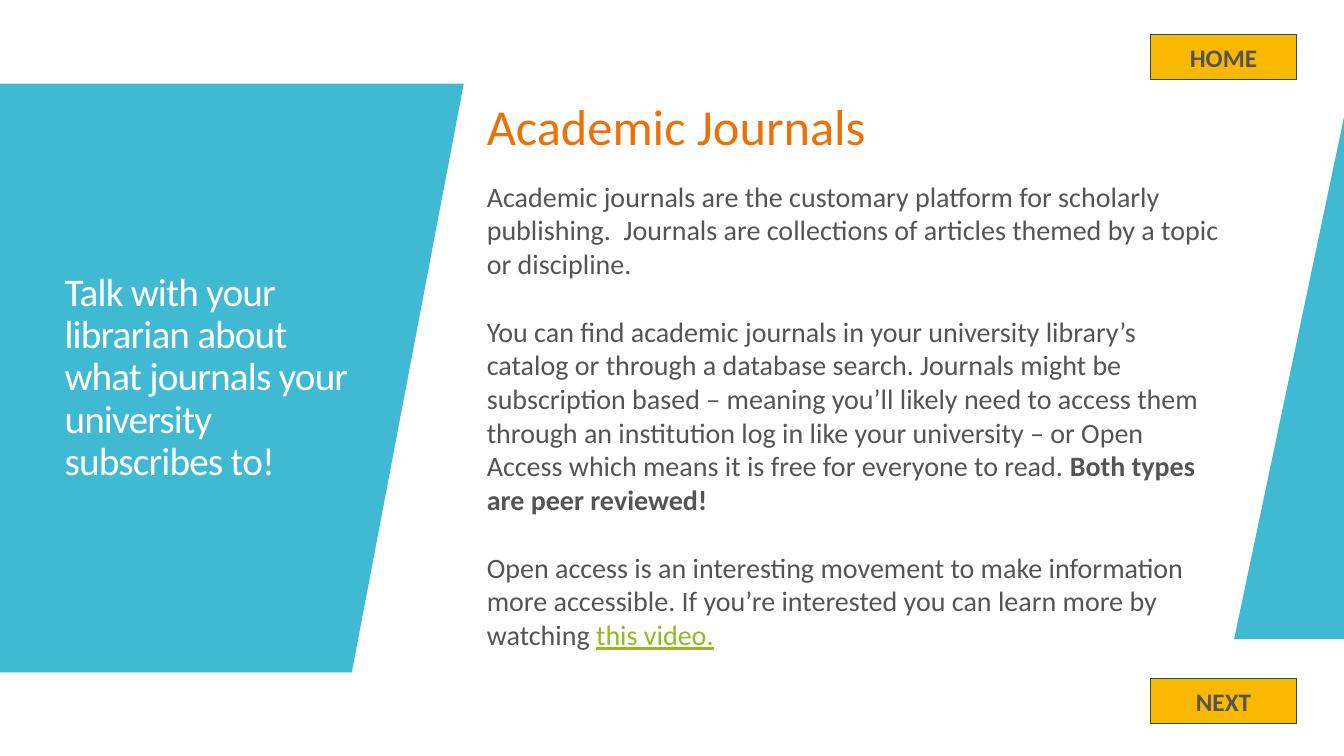
from dataclasses import dataclass

from pptx import Presentation
from pptx.dml.color import RGBColor as RGB
from pptx.enum.shapes import MSO_SHAPE as Shape
from pptx.enum.text import MSO_ANCHOR as Anchor, PP_ALIGN as Align
from pptx.util import Pt

PX = 9144  # EMU per px, 100 px to the inch
FONT = "Calibri"
TEAL = RGB(0x40, 0xBA, 0xD2)
GOLD = RGB(0xFA, 0xB9, 0x00)
EDGE = RGB(0x1C, 0x52, 0x5C)
ORANGE = RGB(0xEE, 0x70, 0x08)
GREY = RGB(0x54, 0x54, 0x54)
GREEN = RGB(0x90, 0xBB, 0x23)
WHITE = RGB(0xFF, 0xFF, 0xFF)


@dataclass
class Span:
    text: str
    size: int = 20
    color: RGB = GREY
    bold: bool = False
    under: bool = False


@dataclass
class Button:
    label: str
    top: int


PANELS = [
    [(0, 83), (460, 83), (349, 667), (0, 667)],
    [(1333, 116), (1333, 634), (1224, 634)],
]
BUTTONS = [Button("HOME", 34), Button("NEXT", 673)]
BODY = [
    [Span("Academic journals are the customary platform for scholarly "
          "publishing.  Journals are collections of articles themed by a "
          "topic or discipline.")],
    [Span("You can find academic journals in your university library’s "
          "catalog or through a database search. Journals might be "
          "subscription based – meaning you’ll likely need to access them "
          "through an institution log in like your university – or Open "
          "Access which means it is free for everyone to read."),
     Span(" Both types are peer reviewed!", bold=True)],
    [Span("Open access is an interesting movement to make information more "
          "accessible. If you’re interested you can learn more by watching "),
     Span("this video.", color=GREEN, under=True)],
]


def add_run(para, span: Span):
    run = para.add_run()
    run.text = span.text
    font = run.font
    font.name, font.size, font.bold = FONT, Pt(span.size), span.bold
    font.color.rgb = span.color
    if span.under:
        font.underline = True
    return run


def place(shape, left: int, top: int, width: int, height: int) -> None:
    shape.left, shape.top = left * PX, top * PX
    shape.width, shape.height = width * PX, height * PX


def add_panel(slide, points: list[tuple[int, int]]) -> None:
    pen = slide.shapes.build_freeform(*points[0], scale=PX)
    pen.add_line_segments(points[1:], close=True)
    panel = pen.convert_to_shape()
    panel.shadow.inherit = False
    panel.fill.solid()
    panel.fill.fore_color.rgb = TEAL
    panel.line.fill.background()


def add_text(slide, area: tuple[int, int, int, int],
             paras: list[list[Span]], gap: float = 0):
    box = slide.shapes.add_textbox(*(n * PX for n in area))
    frame = box.text_frame
    frame.word_wrap = True
    for i, spans in enumerate(paras):
        para = frame.add_paragraph() if i else frame.paragraphs[0]
        if i:
            para.space_before = Pt(gap)
        for span in spans:
            add_run(para, span)
    return frame


def add_button(slide, button: Button) -> None:
    shape = slide.shapes.add_shape(
        Shape.RECTANGLE, 1141 * PX, button.top * PX, 145 * PX, 45 * PX)
    shape.shadow.inherit = False
    shape.fill.solid()
    shape.fill.fore_color.rgb = GOLD
    shape.line.color.rgb = EDGE
    shape.line.width = Pt(0.85)
    frame = shape.text_frame
    frame.vertical_anchor = Anchor.MIDDLE
    para = frame.paragraphs[0]
    para.alignment = Align.CENTER
    add_run(para, Span(button.label, 18, bold=True))


def main() -> None:
    deck = Presentation()
    deck.slide_width, deck.slide_height = 1333 * PX, 750 * PX
    slide = deck.slides.add_slide(deck.slide_layouts[5])

    # Slanted side panels
    for points in PANELS:
        add_panel(slide, points)

    # Title, brought in front of the panels
    title = slide.shapes.title
    slide.shapes.element.append(title.element)
    place(title, 54, 184, 303, 382)
    frame = title.text_frame
    frame.word_wrap = True
    frame.vertical_anchor = Anchor.MIDDLE
    para = frame.paragraphs[0]
    para.alignment, para.line_spacing = Align.LEFT, 0.9
    run = add_run(para, Span("Talk with your librarian about what journals "
                             "your university subscribes to!", 28, WHITE))
    run.font._element.set("spc", "-60")

    # Heading and body
    head = add_text(slide, (473, 83, 800, 90),
                    [[Span("Academic Journals", 36, ORANGE)]])
    head.vertical_anchor = Anchor.MIDDLE
    head.paragraphs[0].line_spacing = 0.9
    add_text(slide, (473, 173, 751, 481), BODY, gap=24.4)

    # Navigation buttons
    for button in BUTTONS:
        add_button(slide, button)

    deck.save("out.pptx")


if __name__ == "__main__":
    main()
